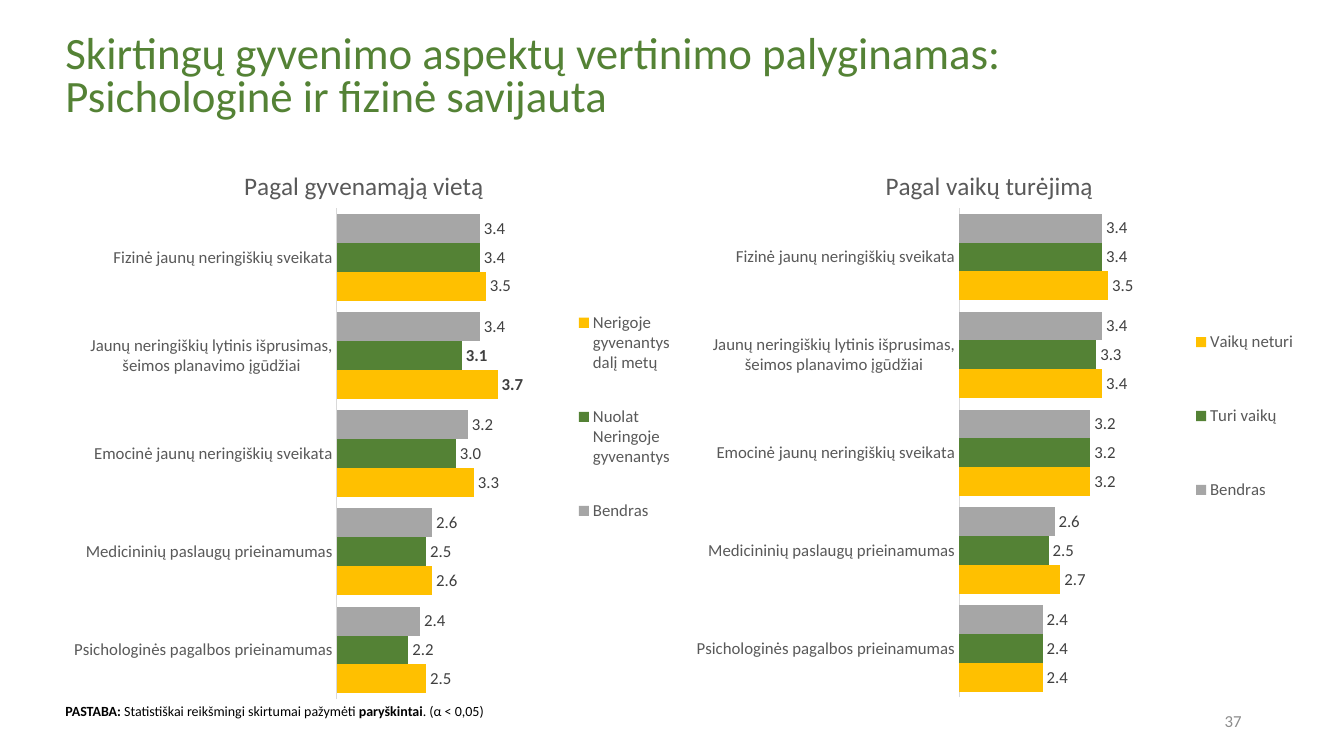
from dataclasses import dataclass

from lxml.etree import SubElement
from pptx import Presentation
from pptx.chart.data import CategoryChartData
from pptx.dml.color import RGBColor
from pptx.enum.chart import XL_CHART_TYPE, XL_LABEL_POSITION, XL_LEGEND_POSITION, XL_TICK_MARK
from pptx.enum.text import MSO_ANCHOR, PP_ALIGN
from pptx.oxml.ns import qn
from pptx.util import Inches, Pt


@dataclass(frozen=True)
class Theme:
    font: str = "Calibri"
    green: str = "548235"
    gray: str = "A6A6A6"
    yellow: str = "FFC000"
    muted: str = "595959"
    label: str = "404040"
    axis: str = "D9D9D9"
    number: str = "8C8C8C"
    black: str = "000000"
    title_size: int = 32
    chart_title_size: int = 18
    chart_size: int = 12
    note_size: int = 10


class SlideBuilder:
    """Places styled elements on a slide, on a grid of 160 columns by 90 rows."""

    columns, rows = 160, 90

    def __init__(self, deck, theme):
        self.deck, self.theme = deck, theme
        self.page = deck.slides.add_slide(deck.slide_layouts[6])

    def area(self, left, top, width, height):
        column = self.deck.slide_width / self.columns
        row = self.deck.slide_height / self.rows
        return [round(value) for value in (left * column, top * row, width * column, height * row)]

    def style(self, font, size, color, bold=None):
        font.name, font.size, font.bold = self.theme.font, Pt(size), bold
        font.color.rgb = RGBColor.from_string(color)

    def text(self, place, spans, size, color, align=PP_ALIGN.LEFT,
             anchor=MSO_ANCHOR.MIDDLE, line_spacing=None):
        frame = self.page.shapes.add_textbox(*self.area(*place)).text_frame
        frame.word_wrap, frame.vertical_anchor = True, anchor
        para = frame.paragraphs[0]
        para.alignment, para.line_spacing = align, line_spacing
        self.style(para.font, size, color)
        for words, bold in spans:
            span = para.add_run()
            span.text, span.font.bold = words, bold

    def arrange(self, element, index, inner=False, **shares):
        for old in element.findall(qn("c:layout")):
            element.remove(old)
        layout = element.makeelement(qn("c:layout"))
        element.insert(index, layout)
        manual = SubElement(layout, qn("c:manualLayout"))
        if inner:
            SubElement(manual, qn("c:layoutTarget")).set("val", "inner")
        for key in ("x", "y"):
            SubElement(manual, qn(f"c:{key}Mode")).set("val", "edge")
        for key, share in shares.items():
            SubElement(manual, qn(f"c:{key}")).set("val", str(share))

    def bar_chart(self, place, title, title_left, categories, series, bold_points=()):
        theme = self.theme
        data = CategoryChartData(number_format="#,##0.0")
        data.categories = categories
        for name, values in series:
            data.add_series(name, values)
        chart = self.page.shapes.add_chart(
            XL_CHART_TYPE.BAR_CLUSTERED, *self.area(*place), data).chart
        self.style(chart.font, theme.note_size, theme.black)

        chart.has_title = True
        heading = chart.chart_title
        heading.include_in_layout = False
        para = heading.text_frame.paragraphs[0]
        para.text = title
        self.style(para.font, theme.chart_title_size, theme.muted, False)
        self.arrange(heading._element, 1, x=title_left, y=0.04)

        chart.has_legend = True
        legend = chart.legend
        legend.position = XL_LEGEND_POSITION.RIGHT
        legend.include_in_layout = False
        self.style(legend.font, theme.chart_size, theme.muted)
        self.arrange(legend._element, 1, x=0.83, y=0.24, w=0.16, h=0.48)

        names = chart.category_axis
        names.reverse_order = True
        names.major_tick_mark = names.minor_tick_mark = XL_TICK_MARK.NONE
        names.format.line.color.rgb = RGBColor.from_string(theme.axis)
        names.format.line.width = Pt(0.75)
        self.style(names.tick_labels.font, theme.chart_size, theme.muted)
        scale = chart.value_axis
        scale.visible = scale.has_major_gridlines = False
        scale.minimum_scale, scale.maximum_scale = 1, 5

        plot = chart.plots[0]
        plot.gap_width, plot.overlap, plot.vary_by_categories = 40, 0, False
        for bars, color in zip(plot.series, (theme.gray, theme.green, theme.yellow)):
            bars.format.fill.solid()
            bars.format.fill.fore_color.rgb = RGBColor.from_string(color)
            labels = bars.data_labels
            labels.show_value, labels.position = True, XL_LABEL_POSITION.OUTSIDE_END
            labels.number_format, labels.number_format_is_linked = "#,##0.0", False
            self.style(labels.font, theme.chart_size, theme.label)
        for series_index, point_index in bold_points:
            label = plot.series[series_index].points[point_index].data_label
            self.style(label.font, theme.chart_size, theme.label, True)
            label.position = XL_LABEL_POSITION.OUTSIDE_END
        plot_area = chart._chartSpace.find(f".//{qn('c:plotArea')}")
        self.arrange(plot_area, 0, inner=True, x=0.454, y=0.118, w=0.378, h=0.852)


def main():
    deck = Presentation()
    deck.slide_width, deck.slide_height = Inches(13.33), Inches(7.5)
    theme = Theme()
    slide = SlideBuilder(deck, theme)
    slide.text((113, 83.4, 36, 4.8), [("37", None)], 12, theme.number, PP_ALIGN.RIGHT)
    slide.text((6.6, 3.1, 122.5, 12.4),
               [("Skirtingų gyvenimo aspektų vertinimo palyginamas: "
                 "Psichologinė ir fizinė savijauta", None)],
               theme.title_size, theme.green, line_spacing=0.8)

    categories = (
        "Fizinė jaunų neringiškių sveikata",
        "Jaunų neringiškių lytinis išprusimas, šeimos planavimo įgūdžiai",
        "Emocinė jaunų neringiškių sveikata",
        "Medicininių paslaugų prieinamumas",
        "Psichologinės pagalbos prieinamumas",
    )
    overall = ("Bendras", (3.4, 3.4, 3.2, 2.6, 2.4))
    slide.bar_chart((6, 16.7, 75.1, 68.6), "Pagal gyvenamąją vietą", 0.3, categories, (
        overall,
        ("Nuolat Neringoje gyvenantys", (3.4, 3.1, 3.0, 2.5, 2.2)),
        ("Nerigoje gyvenantys dalį metų", (3.5, 3.7, 3.3, 2.6, 2.5)),
    ), bold_points=((1, 1), (2, 1)))
    slide.bar_chart((80.1, 16.7, 75.1, 68.4), "Pagal vaikų turėjimą", 0.33, categories, (
        overall,
        ("Turi vaikų", (3.4, 3.3, 3.2, 2.5, 2.4)),
        ("Vaikų neturi", (3.5, 3.4, 3.2, 2.7, 2.4)),
    ))

    slide.text((6.6, 83, 134.9, 3.2), [
        ("PASTABA:", True),
        (" Statistiškai reikšmingi skirtumai pažymėti ", None),
        ("paryškintai", True),
        (". (α < 0,05)", None),
    ], theme.note_size, theme.black, PP_ALIGN.JUSTIFY, MSO_ANCHOR.TOP)
    deck.save("out.pptx")


if __name__ == "__main__":
    main()
